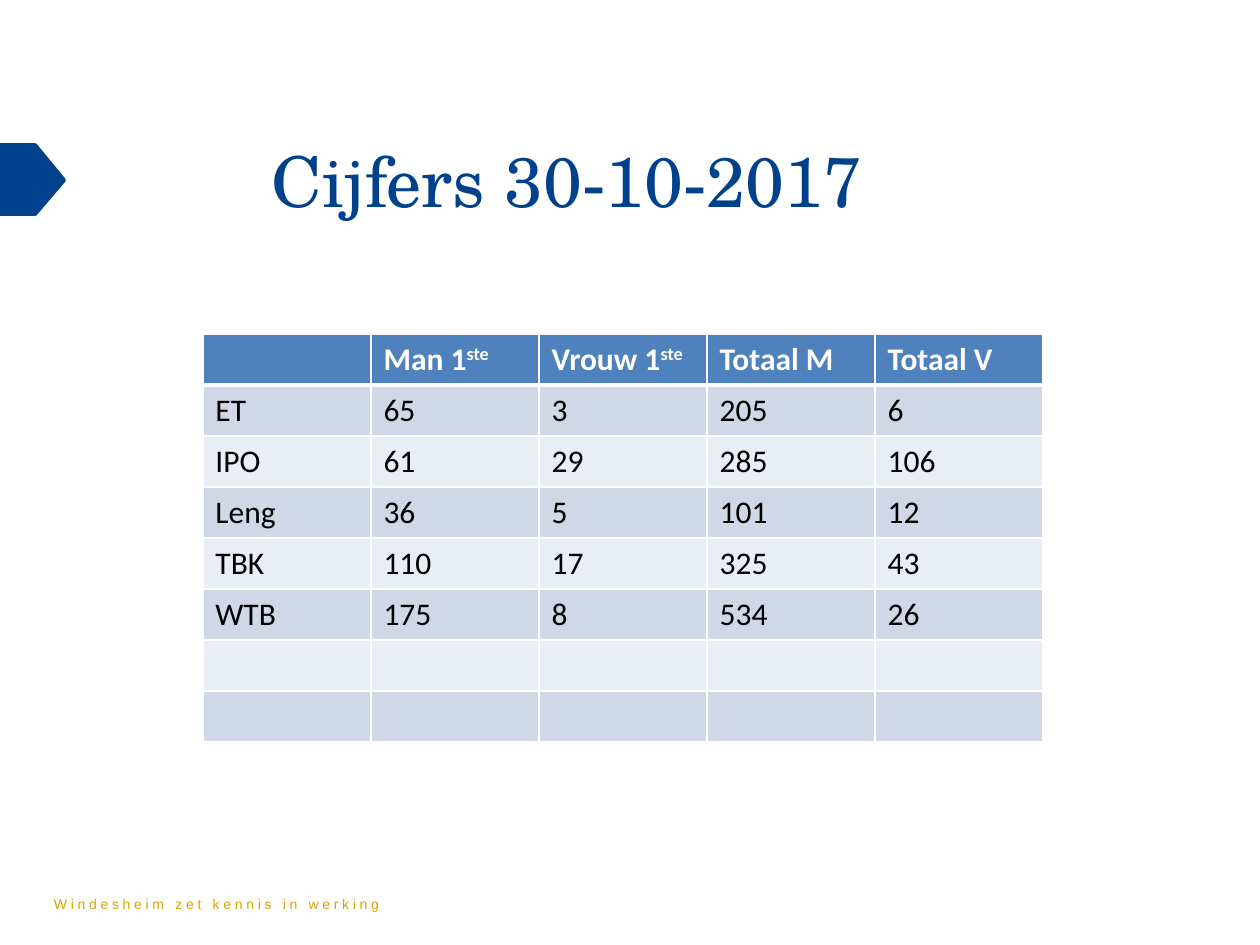
from lxml import etree
from pptx import Presentation
from pptx.dml.color import RGBColor
from pptx.enum.text import MSO_ANCHOR, PP_ALIGN
from pptx.oxml.ns import qn
from pptx.util import Inches, Pt

TOP = MSO_ANCHOR.TOP
MID = PP_ALIGN.CENTER
HUES = {"navy": "00418C", "gold": "D7A500", "head": "4F81BD", "odd": "D0D8E8",
        "even": "E9EDF4", "white": "FFFFFF", "black": "000000"}

TITLE = "Cijfers 30-10-2017"
MOTTO = "Windesheim zet kennis in werking"
HEADS = [[], ["Man 1", "ste"], ["Vrouw 1", "ste"], ["Totaal M"], ["Totaal V"]]
DATA = [
    ("ET", 65, 3, 205, 6),
    ("IPO", 61, 29, 285, 106),
    ("Leng", 36, 5, 101, 12),
    ("TBK", 110, 17, 325, 43),
    ("WTB", 175, 8, 534, 26),
    ("",) * 5,
    ("",) * 5,
]
ARROW = [(0, 1.15), (0.28, 1.15), (0.51, 1.43), (0.28, 1.7), (0, 1.7)]
BOX = [Inches(n) for n in (1.61, 2.65, 6.67, 3.24)]
FONTS = {
    "title": {"name": "TeX Gyre Schola", "size": Pt(40), "bold": False},
    "motto": {"name": "Arial", "size": Pt(8)},
    "head": {"name": "Calibri", "size": Pt(18), "bold": True},
    "body": {"name": "Calibri", "size": Pt(18), "bold": False},
}
FRAME = {"word_wrap": True, "vertical_anchor": TOP, "margin_top": Inches(0.73),
         "margin_bottom": 0}


def hue(key):
    return RGBColor.from_string(HUES[key])


def put(item, vals):
    for key, val in vals.items():
        setattr(item, key, val)


def style(font, kind, tint):
    put(font, FONTS[kind])
    font.color.rgb = hue(tint)


def write(para, text, kind, tint):
    run = para.add_run()
    run.text = text
    style(run.font, kind, tint)
    return run.font


def edge(cell, side, width):
    line = etree.SubElement(cell._tc.get_or_add_tcPr(), qn("a:" + side), w=str(Pt(width)))
    fill = etree.SubElement(line, qn("a:solidFill"))
    etree.SubElement(fill, qn("a:srgbClr"), val=HUES["white"])


def dress(cell, row):
    for side in ("lnL", "lnR", "lnT", "lnB"):
        thick = (row, side) in ((0, "lnB"), (1, "lnT"))
        edge(cell, side, 3 if thick else 1)
    cell.fill.solid()
    cell.fill.fore_color.rgb = hue("head" if row == 0 else "odd" if row % 2 else "even")


def fill_table(table):
    rows = [HEADS] + [[[str(val)] if val != "" else [] for val in row] for row in DATA]
    for r, row in enumerate(rows):
        kind, tint = ("head", "white") if r == 0 else ("body", "black")
        for c, parts in enumerate(row):
            cell = table.cell(r, c)
            dress(cell, r)
            para = cell.text_frame.paragraphs[0]
            style(para.font, kind, tint)
            for n, part in enumerate(parts):
                font = write(para, part, kind, tint)
                if n:
                    font._element.set("baseline", "30000")


def main():
    deck = Presentation()
    put(deck, {"slide_width": Inches(10), "slide_height": Inches(7.5)})
    slide = deck.slides.add_slide(deck.slide_layouts[5])
    shapes = slide.shapes

    title = shapes.title
    put(title, {"left": 0, "top": Inches(0.36), "width": Inches(9), "height": Inches(1.25)})
    put(title.text_frame, FRAME)
    para = title.text_frame.paragraphs[0]
    para.alignment = MID
    write(para, TITLE, "title", "navy")

    motto = shapes.add_textbox(Inches(0.33), Inches(7.06), Inches(3.31), Inches(0.24))
    motto.text_frame.word_wrap = True
    font = write(motto.text_frame.paragraphs[0], MOTTO, "motto", "gold")
    font._element.set("spc", "210")

    dots = [(Inches(x), Inches(y)) for x, y in ARROW]
    pen = shapes.build_freeform(*dots[0])
    pen.add_line_segments(dots[1:], close=True)
    arrow = pen.convert_to_shape()
    arrow.shadow.inherit = False
    arrow.fill.solid()
    arrow.fill.fore_color.rgb = hue("navy")
    arrow.line.color.rgb = hue("navy")
    arrow.line.width = Pt(2)

    fill_table(shapes.add_table(len(DATA) + 1, len(HEADS), *BOX).table)
    deck.save("out.pptx")


if __name__ == "__main__":
    main()
